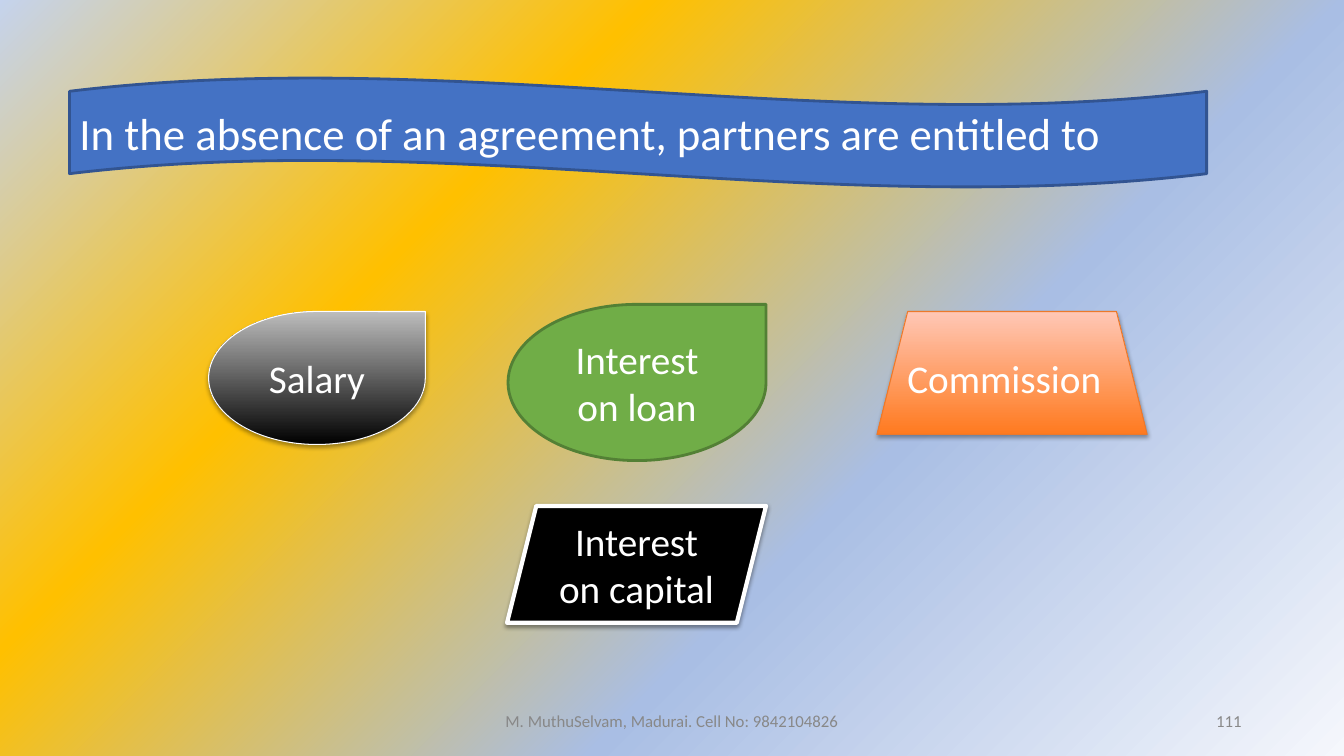
from lxml import etree
from pptx import Presentation
from pptx import util as u
from pptx.dml.color import RGBColor
from pptx.enum import shapes, text
from pptx.oxml.ns import nsdecls, qn

G, A = shapes.MSO_SHAPE, text.PP_ALIGN
LEFT, CENTER, RIGHT = A.LEFT, A.CENTER, A.RIGHT

BACKGROUND = [(0, "F5F7FC"), (36, "A9BEE4"), (69, "FFC000"), (100, "C5D3ED")]
CORNER = ('<a:path {} path="circle"><a:fillToRect l="100000" t="100000"/></a:path>',
          '<a:tileRect {} r="-100000" b="-100000"/>')
UPWARD = ('<a:lin {} ang="16200000" scaled="0"/>',)
BLACK_FADE = [(0, "000000"), (100, "BDBDBD")]
ORANGE_FADE = [(0, "FF7A1F"), (100, "FFC7B6")]

# kind, box, fill, line, (shadow opacity, distance), text, size, alignment
SHAPES = [
    (G.WAVE, (49.7, 55.4, 812.2, 78.5), "4472C4", ("325491", 2), None,
     "In the absence of an agreement, partners are entitled to", 32, LEFT),
    (G.TEAR, (149, 222.5, 154.8, 95), BLACK_FADE, ("FFFFFF", 0.75), (35, 1.8),
     "Salary", 28, CENTER),
    (G.TRAPEZOID, (626.4, 222.5, 193, 87.8), ORANGE_FADE, ("EC792B", 0.75), (35, 1.8),
     "Commission", 28, LEFT),
    (G.PARALLELOGRAM, (362.2, 361.4, 185, 83.5), "000000", ("FFFFFF", 3), (38, 1.6),
     "Interest on capital", 28, CENTER),
    (G.TEAR, (362.9, 217.4, 184.3, 111.6), "70AD47", ("538035", 2), None,
     "Interest on loan", 28, CENTER),
]
FOOTERS = [
    ((318, 500.5, 324, 28.8), "M. MuthuSelvam, Madurai. Cell No: 9842104826", CENTER),
    ((678, 500.5, 216, 28.8), "111", RIGHT),
]


def rgb(code):
    return RGBColor.from_string(code)


def add_xml(parent, xml):
    parent.append(etree.fromstring(xml.format(nsdecls("a"))))


def set_gradient(owner, fill, stops, direction):
    fill.gradient()
    grad = owner.element.find(".//" + qn("a:gradFill"))
    for child in list(grad):
        grad.remove(child)
    gs = "".join(f'<a:gs pos="{pos * 1000}"><a:srgbClr val="{code}"/></a:gs>'
                 for pos, code in stops)
    for xml in ("<a:gsLst {}>" + gs + "</a:gsLst>", *direction):
        add_xml(grad, xml)


def set_shadow(sp, opacity, distance):
    add_xml(sp.element.spPr.find(qn("a:effectLst")),
            f'<a:outerShdw {{}} blurRad="{u.Pt(3.1)}" dist="{u.Pt(distance)}" '
            'dir="5400000" rotWithShape="0"><a:srgbClr val="000000">'
            f'<a:alpha val="{opacity * 1000}"/></a:srgbClr></a:outerShdw>')


def set_text(sp, words, size, code, align):
    tf = sp.text_frame
    tf.word_wrap = True
    tf.vertical_anchor = text.MSO_ANCHOR.MIDDLE
    p = tf.paragraphs[0]
    p.text, p.alignment = words, align
    p.font.name, p.font.size = "Calibri", u.Pt(size)
    p.font.color.rgb = rgb(code)


prs = Presentation()
prs.slide_width, prs.slide_height = u.Pt(960), u.Pt(540)
s = prs.slides.add_slide(prs.slide_layouts[6])
set_gradient(s, s.background.fill, BACKGROUND, CORNER)

for kind, box, fill, (line, width), shadow, words, size, align in SHAPES:
    sp = s.shapes.add_shape(kind, *map(u.Pt, box))
    sp.shadow.inherit = False
    if isinstance(fill, str):
        sp.fill.solid()
        sp.fill.fore_color.rgb = rgb(fill)
    else:
        set_gradient(sp, sp.fill, fill, UPWARD)
    sp.line.color.rgb = rgb(line)
    sp.line.width = u.Pt(width)
    if shadow:
        set_shadow(sp, *shadow)
    set_text(sp, words, size, "FFFFFF", align)

for box, words, align in FOOTERS:
    set_text(s.shapes.add_textbox(*map(u.Pt, box)), words, 12, "888888", align)

prs.save("out.pptx")
